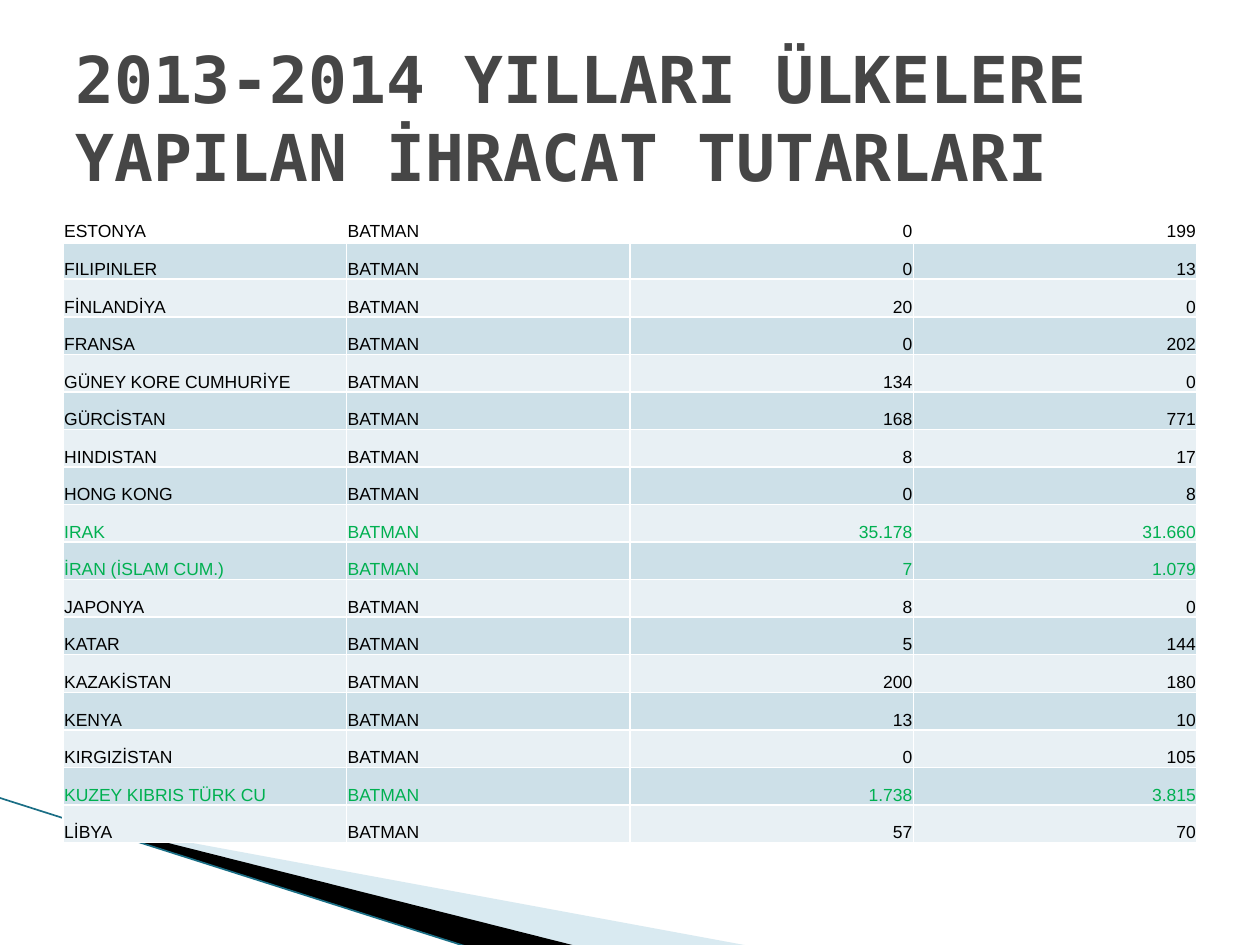
from lxml import etree
from pptx import Presentation, util as u
from pptx.dml.color import RGBColor
from pptx.enum import shapes, text
from pptx.oxml.ns import qn

WIDTH, HEIGHT = u.Inches(10), u.Inches(7.5)
COLORS = {
    "title": "464646", "ink": "000000", "highlight": "00B050",
    "header": "FFFFFF", "band_dark": "CDE0E8", "band_light": "E8F0F4",
    "border": "FFFFFF", "pale_wedge": "A0CBDC", "dark_wedge": "000000",
    "edge": "1A6E85",
}
CITY = "BATMAN"
EXPORTS = [
    ("ESTONYA", "0", "199"),
    ("FILIPINLER", "0", "13"),
    ("FİNLANDİYA", "20", "0"),
    ("FRANSA", "0", "202"),
    ("GÜNEY KORE CUMHURİYE", "134", "0"),
    ("GÜRCİSTAN", "168", "771"),
    ("HINDISTAN", "8", "17"),
    ("HONG KONG", "0", "8"),
    ("IRAK", "35.178", "31.660"),
    ("İRAN (İSLAM CUM.)", "7", "1.079"),
    ("JAPONYA", "8", "0"),
    ("KATAR", "5", "144"),
    ("KAZAKİSTAN", "200", "180"),
    ("KENYA", "13", "10"),
    ("KIRGIZİSTAN", "0", "105"),
    ("KUZEY KIBRIS TÜRK CU", "1.738", "3.815"),
    ("LİBYA", "57", "70"),
]
HIGHLIGHTED = {"IRAK", "İRAN (İSLAM CUM.)", "KUZEY KIBRIS TÜRK CU"}


def rgb(name):
    return RGBColor.from_string(COLORS[name])


def across(percent):
    return round(WIDTH * percent / 100)


def down(percent):
    return round(HEIGHT * percent / 100)


def write(frame, words, *, size, font, color, bold=False, align=text.PP_ALIGN.LEFT):
    paragraph = frame.paragraphs[0]
    paragraph.alignment = align
    run = paragraph.add_run()
    run.text = words
    run.font.size = u.Pt(size)
    run.font.name = font
    run.font.bold = bold
    run.font.color.rgb = rgb(color)


def add_wedge(slide, corners, color, opacity=100):
    """Draw a filled outline; corners are percentages of the slide's size."""
    points = [(across(x), down(y)) for x, y in corners]
    builder = slide.shapes.build_freeform(*points[0])
    builder.add_line_segments(points[1:], close=True)
    wedge = builder.convert_to_shape()
    wedge.shadow.inherit = False
    wedge.line.fill.background()
    wedge.fill.solid()
    wedge.fill.fore_color.rgb = rgb(color)
    if opacity < 100:
        tint = wedge.fill._xPr.find(qn("a:solidFill"))[0]
        etree.SubElement(tint, qn("a:alpha"), val=str(opacity * 1000))


def add_edge(slide, start, end):
    edge = slide.shapes.add_connector(
        shapes.MSO_CONNECTOR.STRAIGHT,
        across(start[0]), down(start[1]), across(end[0]), down(end[1]))
    edge.line.color.rgb = rgb("edge")
    edge.line.width = u.Pt(0.95)
    etree.SubElement(edge._element.spPr, qn("a:effectLst"))


def add_borders(cell, bottom):
    properties = cell._tc.get_or_add_tcPr()
    for side, points in (("L", 1), ("R", 1), ("T", 1), ("B", bottom)):
        border = etree.SubElement(properties, qn(f"a:ln{side}"), w=str(u.Pt(points)))
        fill = etree.SubElement(border, qn("a:solidFill"))
        etree.SubElement(fill, qn("a:srgbClr"), val=COLORS["border"])


def fill_cell(cell, words, band, color, align, bottom):
    cell.margin_left = cell.margin_right = cell.margin_top = u.Inches(0.01)
    cell.margin_bottom = 0
    cell.vertical_anchor = text.MSO_ANCHOR.BOTTOM
    add_borders(cell, bottom)
    cell.fill.solid()
    cell.fill.fore_color.rgb = rgb(band)
    write(cell.text_frame, words, size=10, font="Arial", color=color, align=align)


def add_export_table(slide):
    table = slide.shapes.add_table(
        len(EXPORTS), 4, across(5), down(21.6), across(90), down(67.6)).table
    for index, (country, *amounts) in enumerate(EXPORTS):
        if index == 0:
            band, bottom = "header", 3
        else:
            band, bottom = ("band_dark" if index % 2 else "band_light"), 1
        color = "highlight" if country in HIGHLIGHTED else "ink"
        for column, words in enumerate((country, CITY, *amounts)):
            align = text.PP_ALIGN.LEFT if column < 2 else text.PP_ALIGN.RIGHT
            fill_cell(table.cell(index, column), words, band, color, align, bottom)


def add_title(slide, words):
    frame = slide.shapes.add_textbox(across(5), down(4), across(90), down(16.67)).text_frame
    frame.word_wrap = True
    frame.vertical_anchor = text.MSO_ANCHOR.MIDDLE
    write(frame, words, size=36.9, font="DejaVu Sans Mono", color="title", bold=True)


def main():
    deck = Presentation()
    deck.slide_width, deck.slide_height = WIDTH, HEIGHT
    slide = deck.slides.add_slide(deck.slide_layouts[6])
    add_wedge(slide, [(5.5, 86.8), (59.5, 100.1), (45.6, 100.1), (5.5, 86.7)],
              "pale_wedge", opacity=40)
    add_wedge(slide, [(5.3, 86.5), (45.7, 100.1), (37.2, 100.2), (5.4, 86.7)],
              "dark_wedge")
    add_edge(slide, (-0.1, 84.4), (37.1, 100.2))
    add_export_table(slide)
    add_title(slide, "2013-2014 YILLARI ÜLKELERE YAPILAN İHRACAT TUTARLARI")
    deck.save("out.pptx")


if __name__ == "__main__":
    main()
